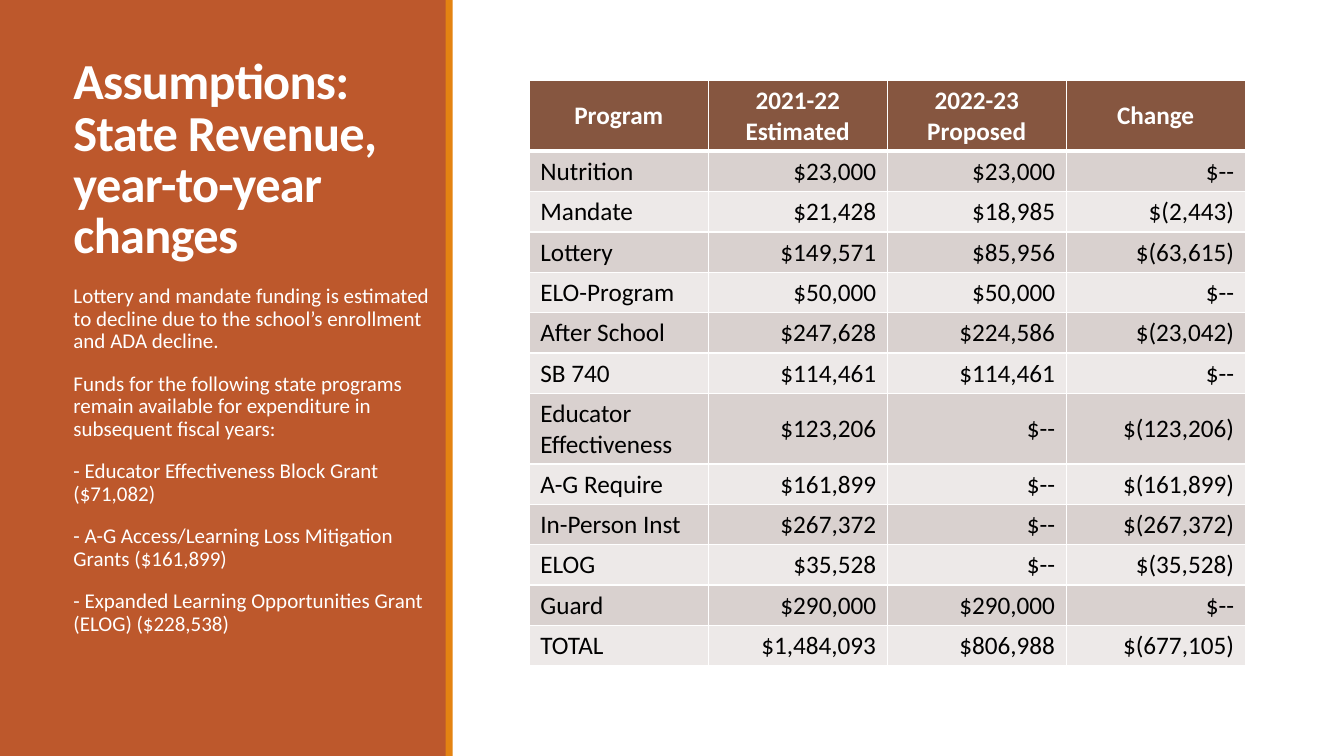
from lxml.etree import SubElement
from pptx import Presentation
from pptx.dml.color import RGBColor
from pptx.enum.shapes import MSO_SHAPE as Shape
from pptx.enum.text import MSO_ANCHOR as Anchor, PP_ALIGN as Align
from pptx.oxml.ns import qn
from pptx.util import Inches, Pt

FONT = "Calibri"
WHITE, BLACK = "FFFFFF", "000000"
RUST, ORANGE = "BD582C", "E48312"
BROWN, DARK_BAND, LIGHT_BAND = "865640", "D9D1CF", "EDE9E8"

TITLE = "Assumptions: State Revenue,\vyear-to-year changes"
NOTES = [
    "Lottery and mandate funding is estimated to decline due to the school’s enrollment and ADA decline.",
    "Funds for the following state programs remain available for expenditure in subsequent fiscal years:",
    "- Educator Effectiveness Block Grant ($71,082)",
    "- A-G Access/Learning Loss Mitigation Grants ($161,899)",
    "- Expanded Learning Opportunities Grant (ELOG) ($228,538)",
]
REVENUE = [
    ("Program", "2021-22 Estimated", "2022-23 Proposed", "Change"),
    ("Nutrition", "$23,000", "$23,000", "$--"),
    ("Mandate", "$21,428", "$18,985", "$(2,443)"),
    ("Lottery", "$149,571", "$85,956", "$(63,615)"),
    ("ELO-Program", "$50,000", "$50,000", "$--"),
    ("After School", "$247,628", "$224,586", "$(23,042)"),
    ("SB 740", "$114,461", "$114,461", "$--"),
    ("Educator Effectiveness", "$123,206", "$--", "$(123,206)"),
    ("A-G Require", "$161,899", "$--", "$(161,899)"),
    ("In-Person Inst", "$267,372", "$--", "$(267,372)"),
    ("ELOG", "$35,528", "$--", "$(35,528)"),
    ("Guard", "$290,000", "$290,000", "$--"),
    ("TOTAL", "$1,484,093", "$806,988", "$(677,105)"),
]


def color(value):
    return RGBColor.from_string(value)


def style(paragraph, size, ink, bold=False):
    font = paragraph.font
    font.name, font.size, font.bold = FONT, Pt(size), bold
    font.color.rgb = color(ink)


def add_panel(slide, left, top, width, height, fill):
    panel = slide.shapes.add_shape(
        Shape.RECTANGLE, Inches(left), Inches(top), Inches(width), Inches(height))
    panel.shadow.inherit = False
    panel.fill.solid()
    panel.fill.fore_color.rgb = color(fill)
    panel.line.fill.background()


def add_text_frame(slide, left, top, width, height, anchor):
    frame = slide.shapes.add_textbox(
        Inches(left), Inches(top), Inches(width), Inches(height)).text_frame
    frame.word_wrap = True
    frame.vertical_anchor = anchor
    return frame


def add_sidebar(slide, left, top, width, height):
    add_panel(slide, left, top, width, height, RUST)
    add_panel(slide, left + width - 0.01, top, 0.07, height, ORANGE)

    text_left, text_width = left + 0.63, width - 0.68
    heading = add_text_frame(
        slide, text_left, top + 0.52, text_width, 2.15, Anchor.BOTTOM).paragraphs[0]
    heading.text = TITLE
    heading.line_spacing = 0.85
    style(heading, 36, WHITE, bold=True)
    for run in heading.runs:
        run._r.get_or_add_rPr().set("spc", "-50")

    notes = add_text_frame(slide, text_left, top + 2.78, text_width, 4.29, Anchor.TOP)
    for index, note in enumerate(NOTES):
        paragraph = notes.add_paragraph() if index else notes.paragraphs[0]
        paragraph.text = note
        paragraph.line_spacing = 0.9
        paragraph.space_before, paragraph.space_after = Pt(12), Pt(2)
        style(paragraph, 15, WHITE)


def add_borders(cell, widths):
    properties = cell._tc.get_or_add_tcPr()
    for side, width in widths.items():
        line = SubElement(properties, qn(f"a:ln{side}"), w=str(Pt(width)))
        fill = SubElement(line, qn("a:solidFill"))
        SubElement(fill, qn("a:srgbClr"), val=WHITE)


def add_revenue_table(slide, left, top, width, height):
    frame = slide.shapes.add_table(
        len(REVENUE), len(REVENUE[0]),
        Inches(left), Inches(top), Inches(width), Inches(height))
    table = frame.table
    for row_index, values in enumerate(REVENUE):
        table.rows[row_index].height = Inches(0.38)
        header = row_index == 0
        band = BROWN if header else DARK_BAND if row_index % 2 else LIGHT_BAND
        borders = {"L": 1, "R": 1, "T": 1, "B": 3} if header else {"L": 1, "R": 1, "B": 1}
        for column, value in enumerate(values):
            cell = table.cell(row_index, column)
            cell.text = value
            cell.vertical_anchor = Anchor.MIDDLE
            cell.margin_left = cell.margin_right = Inches(0.11)
            add_borders(cell, borders)
            cell.fill.solid()
            cell.fill.fore_color.rgb = color(band)
            paragraph = cell.text_frame.paragraphs[0]
            paragraph.alignment = Align.CENTER if header else Align.RIGHT if column else Align.LEFT
            style(paragraph, 18, WHITE if header else BLACK, bold=header)
    frame.height = Inches(height)


def main():
    deck = Presentation()
    deck.slide_width, deck.slide_height = Inches(13.33), Inches(7.5)
    slide = deck.slides.add_slide(deck.slide_layouts[6])
    add_sidebar(slide, 0, 0, 4.43, 7.5)
    add_revenue_table(slide, 5.25, 0.8, 7.1, 5.8)
    deck.save("out.pptx")


if __name__ == "__main__":
    main()
